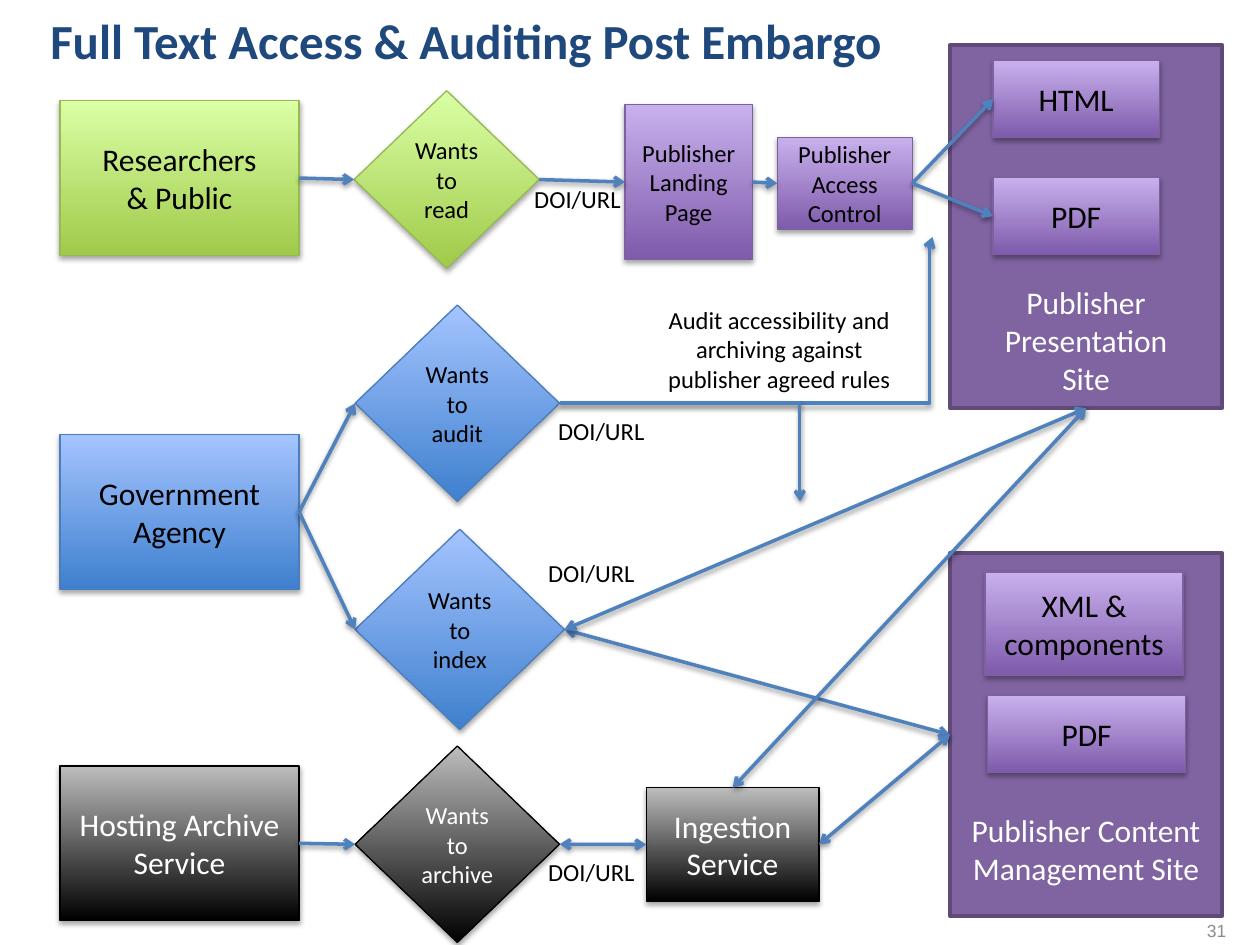
from lxml.etree import SubElement
from pptx import Presentation
from pptx.dml.color import RGBColor
from pptx.enum.shapes import MSO_CONNECTOR as Route, MSO_SHAPE as Form
from pptx.enum.text import MSO_ANCHOR as Anchor, MSO_AUTO_SIZE as AutoSize, PP_ALIGN as Align
from pptx.oxml.ns import qn
from pptx.util import Cm, Pt

COLORS = {
    "panel": "8064A2", "panel_edge": "5F4A78", "arrow": "4F81BD", "title": "1F497D",
    "number": "8C8C8C", "black": "000000", "white": "FFFFFF",
}
THEMES = {
    "purple": ("7F5BAB", "C8B0ED", "7D60A0", "black"),
    "green": ("A0CA4A", "DAFFA5", "98B955", "black"),
    "blue": ("3F80CE", "A4C4FF", "4B7EBC", "black"),
    "gray": ("000000", "BDBDBD", "000000", "white"),
}

TITLE = "Full Text Access & Auditing Post Embargo"
PANELS = {
    "content": ("Publisher Content Management Site", 11.15, 0.6),
    "presentation": ("Publisher\nPresentation\nSite", 0.91, 0.23),
}
BOXES = {
    "xml": ("XML & components", "purple", 18, 19.86, 11.53, 3.99, 2.08),
    "content_pdf": ("PDF", "purple", 18, 19.91, 14.02, 3.99, 1.55),
    "html": ("HTML", "purple", 18, 20.02, 1.22, 3.35, 1.55),
    "pdf": ("PDF", "purple", 18, 20.02, 3.58, 3.35, 1.55),
    "landing": ("Publisher Landing Page", "purple", 14, 12.6, 2.11, 2.57, 3.12),
    "access": ("Publisher Access Control", "purple", 14, 15.67, 2.77, 2.72, 1.85),
    "public": ("Researchers\v& Public", "green", 18, 1.21, 2.03, 4.82, 3.12),
    "agency": ("Government\nAgency", "blue", 18, 1.21, 8.76, 4.82, 3.12),
    "archive": ("Hosting Archive Service", "gray", 18, 1.21, 15.44, 4.82, 3.12),
    "ingestion": ("Ingestion Service", "gray", 18, 13.03, 15.88, 3.48, 2.29),
}
DIAMONDS = {
    "wants_read": ("Wants to read", "green", 14, 7.14, 1.83, 3.73, 3.58),
    "wants_audit": ("Wants to audit", "blue", 14, 7.16, 6.15, 4.12, 3.96),
    "wants_index": ("Wants to index", "blue", 14, 7.16, 10.67, 4.22, 4.04),
    "wants_archive": ("Wants to archive", "gray", 14, 7.16, 15.04, 4.12, 3.96),
}
TOP, LEFT, BOTTOM, RIGHT = range(4)
ONE_WAY = [
    ("public", "wants_read"), ("wants_read", "landing"), ("landing", "access"),
    ("access", "html"), ("access", "pdf"), ("agency", "wants_audit"),
    ("agency", "wants_index"), ("archive", "wants_archive"),
]
TWO_WAY = [
    ("wants_index", RIGHT, "content", LEFT),
    ("wants_index", RIGHT, "presentation", BOTTOM),
    ("ingestion", TOP, "presentation", BOTTOM),
    ("ingestion", RIGHT, "content", LEFT),
    ("wants_archive", RIGHT, "ingestion", LEFT),
]
AUDIT_BENDS = [(18.8, 4.78, 99200), (16.13, 10.11, 99800)]
LINK_LABEL = "DOI/URL"
LINK_LABEL_SPOTS = [(10.52, 3.58), (11, 8.26), (10.8, 11.13), (10.8, 17.15)]
AUDIT_NOTE = "Audit accessibility and archiving against publisher agreed rules"
PAGE_NUMBER = "31"

deck = Presentation()
deck.slide_width, deck.slide_height = Cm(25.4), Cm(19.05)
page = deck.slides.add_slide(deck.slide_layouts[5])
shapes = {}


def rgb(name):
    return RGBColor.from_string(COLORS.get(name, name))


def place(*lengths):
    return [Cm(length) for length in lengths]


def write(shape, text, size, color, align=Align.CENTER, font="Calibri", bold=False):
    frame = shape.text_frame
    for index, line in enumerate(text.split("\n")):
        para = frame.paragraphs[0] if index == 0 else frame.add_paragraph()
        para.alignment = align
        for part, words in enumerate(line.split("\v")):
            if part:
                para.add_line_break()
            span = para.add_run()
            span.text = words
            span.font.name, span.font.size, span.font.bold = font, Pt(size), bold
            span.font.color.rgb = rgb(color)


def add_shadow(effects, distance, alpha):
    shadow = SubElement(effects, qn("a:outerShdw"), blurRad=str(Pt(3.1)),
                        dist=str(Pt(distance)), dir="5400000", rotWithShape="0")
    tint = SubElement(shadow, qn("a:srgbClr"), val=COLORS["black"])
    SubElement(tint, qn("a:alpha"), val=str(alpha * 1000))


def add_panel(text, top, gap):
    panel = page.shapes.add_shape(Form.RECTANGLE, *place(19.15, top, 5.49, 7.32))
    panel.fill.solid()
    panel.fill.fore_color.rgb = rgb("panel")
    panel.line.color.rgb, panel.line.width = rgb("panel_edge"), Pt(2)
    panel.shadow.inherit = False
    panel.text_frame.vertical_anchor = Anchor.BOTTOM
    panel.text_frame.margin_bottom = Cm(gap)
    write(panel, text, 18, "white")
    return panel


def add_node(form, text, theme, size, *spot):
    dark, light, edge, ink = THEMES[theme]
    node = page.shapes.add_shape(form, *place(*spot))
    node.fill.gradient()
    node.fill.gradient_angle = 90
    for stop, shade in zip(node.fill.gradient_stops, (dark, light)):
        stop.color.rgb = rgb(shade)
    node.line.color.rgb, node.line.width = rgb(edge), Pt(0.75)
    node.shadow.inherit = False
    add_shadow(node.element.spPr.find(qn("a:effectLst")), 1.8, 35)
    node.text_frame.vertical_anchor = Anchor.MIDDLE
    write(node, text, size, ink)
    return node


def add_arrow(start, start_side, end=None, end_side=LEFT, point=(0, 0), both=False, bend=None):
    route = Route.ELBOW if bend else Route.STRAIGHT
    arrow = page.shapes.add_connector(route, 0, 0, *place(*point))
    arrow.begin_connect(shapes[start], start_side)
    if end:
        arrow.end_connect(shapes[end], end_side)
    arrow.line.color.rgb, arrow.line.width = rgb("arrow"), Pt(2)
    outline = arrow.element.spPr
    if bend:
        guides = outline.find(qn("a:prstGeom")).find(qn("a:avLst"))
        SubElement(guides, qn("a:gd"), name="adj1", fmla=f"val {bend}")
    stroke = outline.find(qn("a:ln"))
    for tip in ("a:headEnd", "a:tailEnd") if both else ("a:tailEnd",):
        SubElement(stroke, qn(tip), type="arrow")
    add_shadow(SubElement(outline, qn("a:effectLst")), 1.6, 38)


def add_label(text, spot, size=14, color="black", wrap=True, **style):
    label = page.shapes.add_textbox(*place(*spot))
    label.text_frame.word_wrap = wrap
    write(label, text, size, color, **style)
    return label


for name, panel in PANELS.items():
    shapes[name] = add_panel(*panel)
for form, nodes in ((Form.RECTANGLE, BOXES), (Form.DIAMOND, DIAMONDS)):
    for name, node in nodes.items():
        shapes[name] = add_node(form, *node)

for start, end in ONE_WAY:
    add_arrow(start, RIGHT, end)
for link in TWO_WAY:
    add_arrow(*link, both=True)
for x, y, bend in AUDIT_BENDS:
    add_arrow("wants_audit", RIGHT, point=(x, y), bend=bend)

for x, y in LINK_LABEL_SPOTS:
    add_label(LINK_LABEL, (x, y, 2.26, 0.86), wrap=False, align=Align.LEFT)
add_label(AUDIT_NOTE, (12.88, 6.02, 5.66, 2.64))
number = add_label(PAGE_NUMBER, (23.95, 18.45, 1.02, 0.6), 10, "number",
                   align=Align.RIGHT, font="Arial")
number.text_frame.vertical_anchor = Anchor.MIDDLE

title = page.shapes.title
title.left, title.top, title.width, title.height = place(0.76, 0.08, 23.44, 1.45)
title.text_frame.auto_size = AutoSize.NONE
title.text_frame.vertical_anchor = Anchor.TOP
write(title, TITLE, 28, "title", align=Align.LEFT, bold=True)

deck.save("out.pptx")
